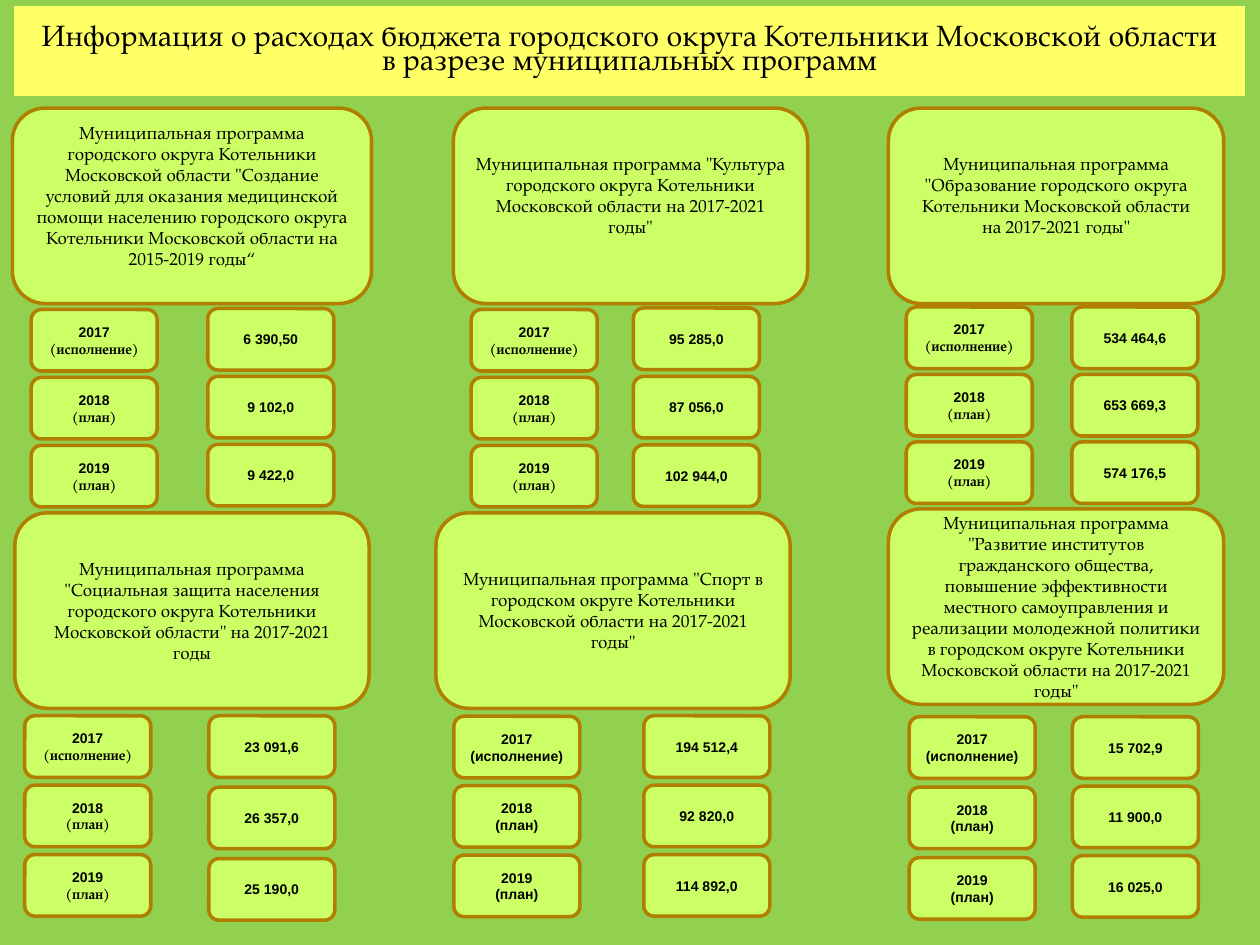
from dataclasses import dataclass

from pptx import Presentation
from pptx.dml.color import RGBColor
from pptx.enum.shapes import MSO_SHAPE
from pptx.enum.text import MSO_ANCHOR, PP_ALIGN
from pptx.util import Cm, Pt

RECT = MSO_SHAPE.RECTANGLE
ROUNDED = MSO_SHAPE.ROUNDED_RECTANGLE
MIDDLE = MSO_ANCHOR.MIDDLE
CENTER = PP_ALIGN.CENTER

SERIF = "TeX Gyre Pagella"
SANS = "Arial"
COLORS = {
    "background": "92D050",
    "banner": "FFFF66",
    "card": "CCFF66",
    "border": "B07E00",
    "text": "000000",
}
TITLE_FORMAT = {"name": SERIF, "size": Pt(16.8)}
PROGRAM_FORMAT = {"name": SERIF, "size": Pt(10)}
FIGURE_FORMAT = {"name": SANS, "size": Pt(8), "bold": True}

PROGRAM_HEIGHT = 3.94
CELL_WIDTH, CELL_HEIGHT = 2.54, 1.24
PERIODS = [("2017", "(исполнение)"), ("2018", "(план)"), ("2019", "(план)")]


@dataclass
class Column:
    dx: float
    dy: float
    pitch: float


@dataclass
class Program:
    name: str
    box: tuple
    years: Column
    amounts: Column
    values: tuple
    note_font: str = SERIF
    bottom_inset: float = 0.13


PROGRAMS = [
    Program(
        "Муниципальная программа городского округа Котельники Московской области "
        "\"Создание условий для оказания медицинской помощи населению городского округа "
        "Котельники Московской области на 2015-2019 годы“",
        (0.25, 2.18, 7.24), Column(0.38, 4.06, 1.37), Column(3.94, 4.04, 1.37),
        ("6 390,50", "9 102,0", "9 422,0"), bottom_inset=0.55),
    Program(
        "Муниципальная программа \"Культура городского округа Котельники "
        "Московской области на 2017-2021 годы\"",
        (9.14, 2.18, 7.14), Column(0.36, 4.06, 1.37), Column(3.63, 4.03, 1.38),
        ("95 285,0", "87 056,0", "102 944,0"), bottom_inset=0.55),
    Program(
        "Муниципальная программа \"Образование городского округа Котельники "
        "Московской области на 2017-2021 годы\"",
        (17.91, 2.18, 6.76), Column(0.36, 4.01, 1.36), Column(3.7, 4.01, 1.36),
        ("534 464,6", "653 669,3", "574 176,5"), bottom_inset=0.55),
    Program(
        "Муниципальная программа \"Социальная защита населения городского округа "
        "Котельники Московской области\" на 2017-2021 годы",
        (0.3, 10.34, 7.14), Column(0.2, 4.09, 1.4), Column(3.91, 4.09, 1.44),
        ("23 091,6", "26 357,0", "25 190,0")),
    Program(
        "Муниципальная программа \"Спорт в городском округе Котельники "
        "Московской области на 2017-2021 годы\"",
        (8.79, 10.34, 7.14), Column(0.36, 4.1, 1.4), Column(4.19, 4.09, 1.4),
        ("194 512,4", "92 820,0", "114 892,0"), note_font=SANS),
    Program(
        "Муниципальная программа \"Развитие институтов гражданского общества, "
        "повышение эффективности местного самоуправления и реализации молодежной политики "
        "в городском округе Котельники Московской области на 2017-2021 годы\"",
        (17.91, 10.26, 6.76), Column(0.42, 4.19, 1.42), Column(3.71, 4.19, 1.4),
        ("15 702,9", "11 900,0", "16 025,0"), note_font=SANS),
]


def color(key):
    return RGBColor.from_string(COLORS[key])


def add_panel(slide, kind, box, lines, fill="card", border="border", weight=2, spacing=None):
    panel = slide.shapes.add_shape(kind, *map(Cm, box))
    panel.shadow.inherit = False
    panel.fill.solid()
    panel.fill.fore_color.rgb = color(fill)
    panel.line.color.rgb = color(border)
    panel.line.width = Pt(weight)
    frame = panel.text_frame
    frame.word_wrap = True
    frame.vertical_anchor = MIDDLE
    for index, (text, font_format) in enumerate(lines):
        paragraph = frame.add_paragraph() if index else frame.paragraphs[0]
        paragraph.alignment = CENTER
        paragraph.line_spacing = spacing
        run = paragraph.add_run()
        run.text = text
        run.font.color.rgb = color("text")
        for attribute, value in font_format.items():
            setattr(run.font, attribute, value)
    return panel


def add_title(slide, box):
    lines = [
        ("Информация о расходах бюджета городского округа Котельники Московской области", TITLE_FORMAT),
        ("в разрезе муниципальных программ", TITLE_FORMAT),
    ]
    add_panel(slide, RECT, box, lines, "banner", "banner", 0.5, 0.7)


def add_program(slide, program):
    left, top, width = program.box
    heading = add_panel(slide, ROUNDED, (left, top, width, PROGRAM_HEIGHT),
                        [(program.name, PROGRAM_FORMAT)])
    heading.text_frame.margin_bottom = Cm(program.bottom_inset)
    note_format = {**FIGURE_FORMAT, "name": program.note_font}
    for row, ((year, note), amount) in enumerate(zip(PERIODS, program.values)):
        cells = [
            (program.years, [(year, FIGURE_FORMAT), (note, note_format)]),
            (program.amounts, [(amount, FIGURE_FORMAT)]),
        ]
        for column, lines in cells:
            box = (left + column.dx, top + column.dy + row * column.pitch, CELL_WIDTH, CELL_HEIGHT)
            add_panel(slide, ROUNDED, box, lines)


def main():
    deck = Presentation()
    deck.slide_width, deck.slide_height = Cm(25.4), Cm(19.05)
    slide = deck.slides.add_slide(deck.slide_layouts[6])
    slide.background.fill.solid()
    slide.background.fill.fore_color.rgb = color("background")
    add_title(slide, (0.3, 0.13, 24.79, 1.8))
    for program in PROGRAMS:
        add_program(slide, program)
    deck.save("out.pptx")


if __name__ == "__main__":
    main()
